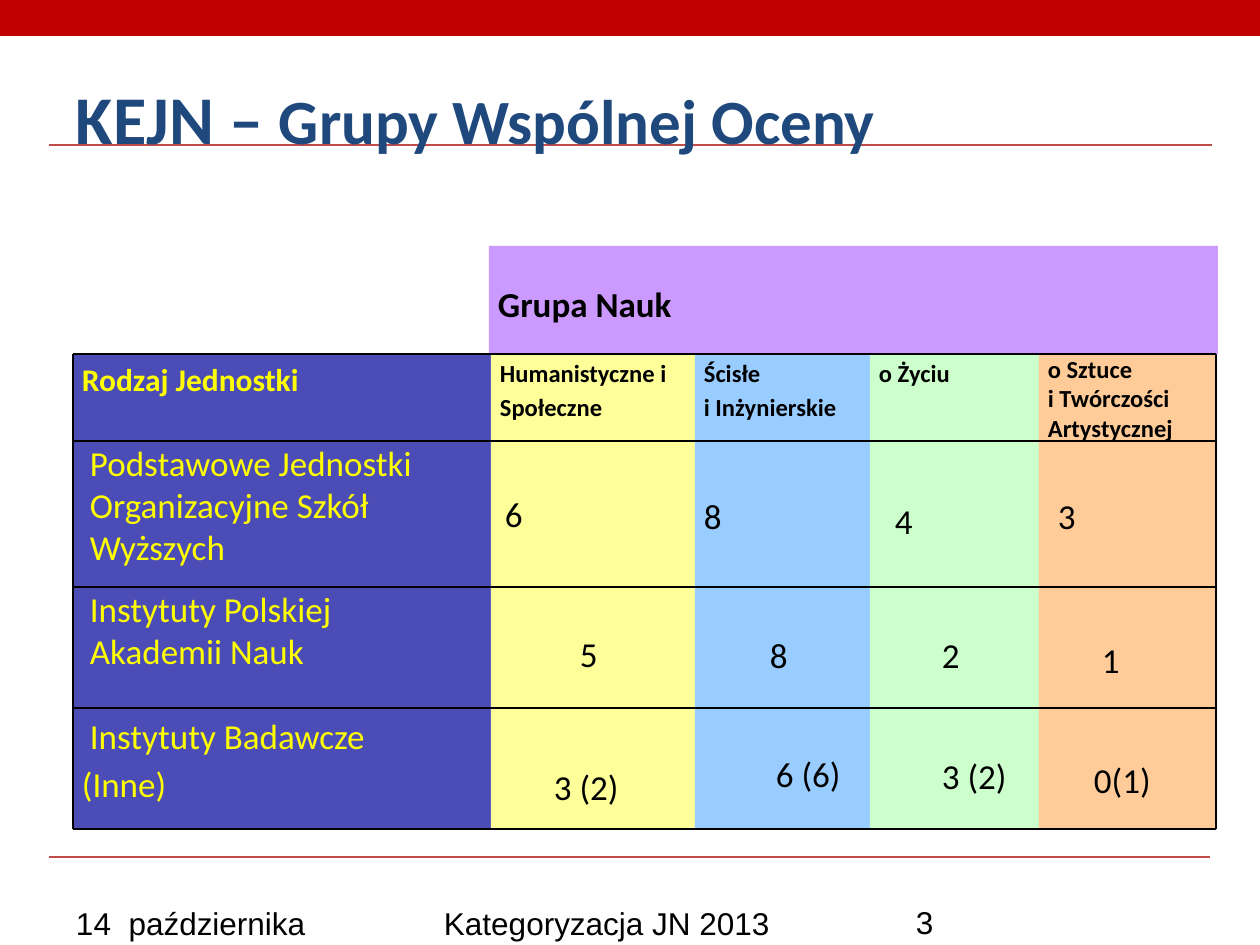
from itertools import pairwise

from lxml import etree
from pptx import Presentation
from pptx import util as u
from pptx.dml.color import RGBColor
from pptx.enum import shapes, text
from pptx.oxml.ns import qn

PX = 914400 / 126


class Theme:
    font, footer_font = "Calibri", "Arial"
    red, rule, grid = "C00000", "BF4C48", "000000"
    title, ink, label = "1F497D", "000000", "FFFF00"
    navy, band = "000099", "CC99FF"
    columns = ["FFFF99", "99CCFF", "CCFFCC", "FFCC99"]
    title_big, title_small = 39, 36
    body, heading, small = 20, 18, 14


def fill_text(shape, paragraphs, size, color, font=Theme.font, bold=False,
              insets=(9, 0), spacing=1.0, anchor=text.MSO_ANCHOR.TOP):
    """Write paragraphs of (run, size) pairs or plain strings; insets are left and top px."""
    frame = shape.text_frame
    frame.word_wrap = True
    frame.vertical_anchor = anchor
    frame.margin_left, frame.margin_top = [u.Emu(int(n * PX)) for n in insets]
    frame.margin_right = u.Emu(int(9 * PX))
    frame.margin_bottom = u.Emu(int(insets[1] * PX)) if anchor == text.MSO_ANCHOR.BOTTOM else 0
    for index, content in enumerate(paragraphs):
        paragraph = frame.add_paragraph() if index else frame.paragraphs[0]
        paragraph.alignment = text.PP_ALIGN.LEFT
        paragraph.line_spacing = spacing
        for words, points in [(content, size)] if isinstance(content, str) else content:
            run = paragraph.add_run()
            run.text = words
            run.font.name, run.font.size, run.font.bold = font, u.Pt(points), bold
            run.font.color.rgb = RGBColor.from_string(color)


def add_item(kind, box, color, width=0.75):
    """Add a filled rectangle or text box (left, top, width, height), or a line (from, to)."""
    box = [u.Emu(int(n * PX)) for n in box]
    if kind == "line":
        line = slide.shapes.add_connector(shapes.MSO_CONNECTOR.STRAIGHT, *box)
        line.line.color.rgb = RGBColor.from_string(color)
        line.line.width = u.Pt(width)
        etree.SubElement(line._element.spPr, qn("a:effectLst"))
        return line
    if kind == "text":
        return slide.shapes.add_textbox(*box)
    shape = slide.shapes.add_shape(shapes.MSO_SHAPE.RECTANGLE, *box)
    shape.shadow.inherit = False
    shape.line.fill.background()
    shape.fill.solid()
    shape.fill.fore_color.rgb = RGBColor.from_string(color)
    if color == Theme.navy:
        rgb = shape._element.spPr.find(".//" + qn("a:srgbClr"))
        etree.SubElement(rgb, qn("a:alpha"), val="70000")
    return shape


presentation = Presentation()
presentation.slide_width, presentation.slide_height = u.Inches(10), u.Inches(7.5)
slide = presentation.slides.add_slide(presentation.slide_layouts[6])

# Frame, title and footer
add_item("rect", (0, 0, 1260, 36), Theme.red)
add_item("line", (49, 145, 1212, 145), Theme.rule)
add_item("line", (49, 857, 1210, 857), Theme.rule)

for words, box in [("14  października 2013", (63, 898, 294, 36)),
                   ("Kategoryzacja JN 2013", (431, 898, 399, 36)),
                   ("3", (903, 897, 294, 42))]:
    fill_text(add_item("text", box, None), [words], Theme.heading, Theme.ink,
              Theme.footer_font, insets=(13, 6))

title = [("KEJN – ", Theme.title_big), ("Grupy Wspólnej Oceny", Theme.title_small)]
fill_text(add_item("text", (63, 57, 1005, 107), None), [title], Theme.title_big,
          Theme.title, bold=True, insets=(13, 6), anchor=text.MSO_ANCHOR.BOTTOM)

# Grid of unit kinds by group of sciences
column_edges = [73, 491, 695, 870, 1039, 1216]
row_edges = [354, 441, 587, 708, 829]
columns, rows = list(pairwise(column_edges)), list(pairwise(row_edges))

band = add_item("rect", (489, 246, 729, 108), Theme.band)
fill_text(band, ["Grupa Nauk"], Theme.body, Theme.ink, bold=True, spacing=1.15,
          anchor=text.MSO_ANCHOR.MIDDLE)

headings = [(["Rodzaj Jednostki"], 1.15),
            (["Humanistyczne i Społeczne"], 1.15),
            (["Ścisłe", "i Inżynierskie"], 1.15),
            (["o Życiu"], 1.15),
            (["o Sztuce", "i Twórczości Artystycznej"], 1.0)]
fills = [Theme.navy, *Theme.columns]
top, bottom = rows[0]
for (left, right), color, (lines, spacing) in zip(columns, fills, headings):
    cell = add_item("rect", (left, top, right - left, bottom - top), color)
    first = color == Theme.navy
    fill_text(cell, lines, Theme.heading if first else Theme.small,
              Theme.label if first else Theme.ink, bold=True, spacing=spacing)

# Each value: text, left inset and top inset within its cell
units = [
    (["Podstawowe Jednostki", "Organizacyjne Szkół", "Wyższych"], 1.0,
     [("6", 14, 51), ("8", 9, 53), ("4", 25, 58), ("3", 19, 53)]),
    (["Instytuty Polskiej", "Akademii Nauk"], 1.0,
     [("5", 89, 45), ("8", 75, 47), ("2", 72, 47), ("1", 63, 51)]),
    (["Instytuty Badawcze", "(Inne)"], 1.15,
     [("3 (2)", 63, 57), ("6 (6)", 81, 44), ("3 (2)", 72, 47), ("0(1)", 55, 50)]),
]
for (top, bottom), (lines, spacing, values) in zip(rows[1:], units):
    height = bottom - top
    left, right = columns[0]
    cell = add_item("rect", (left, top, right - left, height), Theme.navy)
    fill_text(cell, lines, Theme.body, Theme.label, spacing=spacing)
    for paragraph, line in zip(cell.text_frame.paragraphs, lines):
        if not line.startswith("("):
            paragraph._p.get_or_add_pPr().set("marL", str(int(8 * PX)))
    for (left, right), color, (value, inset, drop) in zip(columns[1:], Theme.columns, values):
        cell = add_item("rect", (left, top, right - left, height), color)
        fill_text(cell, [value], Theme.body, Theme.ink, insets=(inset, drop))

for y in row_edges:
    add_item("line", (column_edges[0], y, column_edges[-1], y), Theme.grid, 1)
for x in (column_edges[0], column_edges[-1]):
    add_item("line", (x, row_edges[0], x, row_edges[-1]), Theme.grid, 1)

presentation.save("out.pptx")
